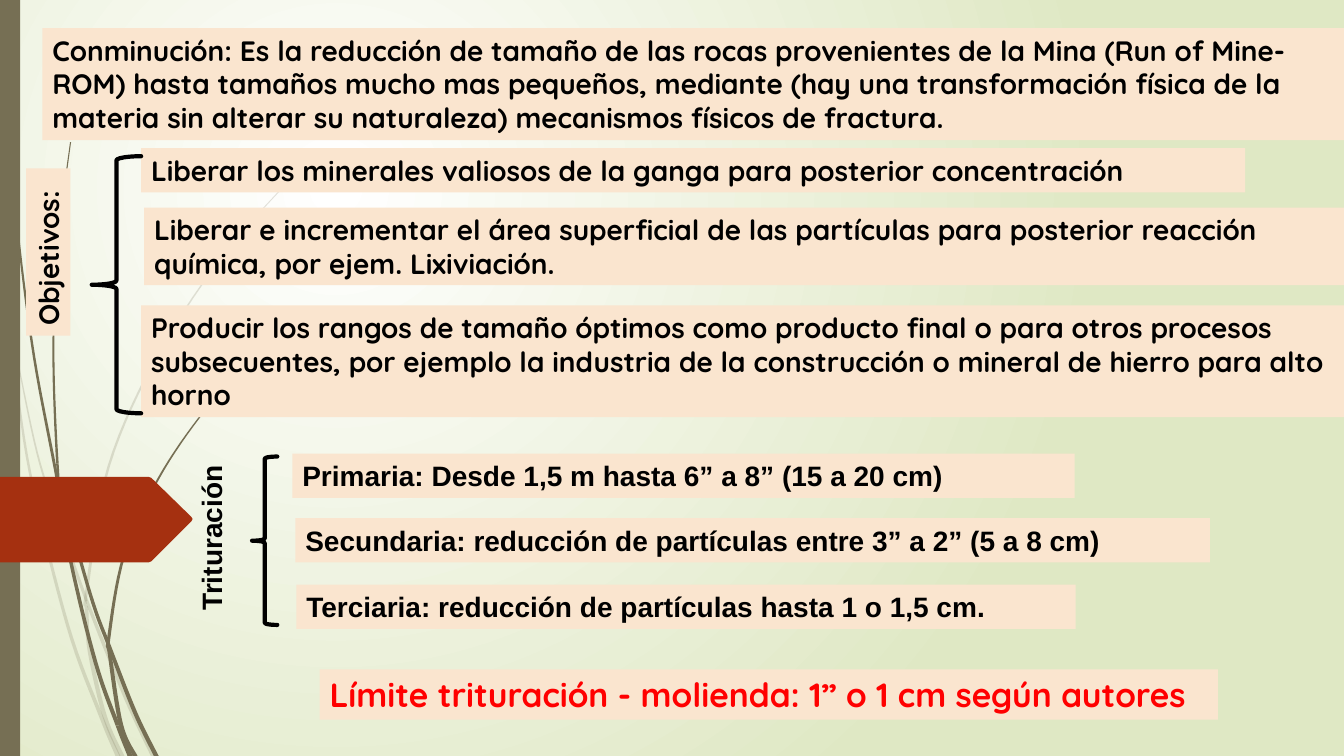
from lxml import etree
from pptx import Presentation
from pptx.dml.color import RGBColor
from pptx.enum.shapes import MSO_SHAPE
from pptx.enum.text import MSO_AUTO_SIZE
from pptx.oxml.ns import qn
from pptx.util import Inches, Pt

RECTANGLE = MSO_SHAPE.RECTANGLE
LEFT_BRACE = MSO_SHAPE.LEFT_BRACE
FIT_SHAPE = MSO_AUTO_SIZE.SHAPE_TO_FIT_TEXT

WHITE = RGBColor(0xFF, 0xFF, 0xFF)
LIME = RGBColor(0xDF, 0xE8, 0xC4)
OLIVE = RGBColor(0x76, 0x6F, 0x54)
RUST = RGBColor(0xA5, 0x30, 0x10)
PEACH = RGBColor(0xFA, 0xE5, 0xCF)
BLACK = RGBColor(0, 0, 0)
RED = RGBColor(0xFF, 0, 0)

ROUNDED = "Quicksand"
PLAIN = "Arial"
CURVE_STEPS = 8

DEFINITION = (
    "Conminución: Es la reducción de tamaño de las rocas provenientes de la Mina "
    "(Run of Mine- ROM) hasta tamaños mucho mas pequeños, mediante (hay una "
    "transformación física de la materia sin alterar su naturaleza) mecanismos "
    "físicos de fractura."
)
OBJECTIVES = [
    ((0, 0, 10.95, 0.44),
     "Liberar los minerales valiosos de la ganga para posterior concentración"),
    ((0.03, 0.59, 12.23, 0.77),
     "Liberar e incrementar el área superficial de las partículas para posterior "
     "reacción química, por ejem. Lixiviación."),
    ((0, 1.56, 12.23, 1.11),
     "Producir los rangos de tamaño óptimos como producto final o para otros procesos "
     "subsecuentes, por ejemplo la industria de la construcción o mineral de hierro "
     "para alto horno"),
]
CRUSHING_STAGES = [
    ((0, 0, 7.76, 0.44), "Primaria: Desde 1,5 m hasta 6” a 8” (15 a 20 cm)"),
    ((0.03, 0.64, 9.07, 0.44),
     "Secundaria: reducción de partículas entre 3” a 2” (5 a 8 cm)"),
    ((0.04, 1.3, 7.73, 0.44), "Terciaria: reducción de partículas hasta 1 o 1,5 cm."),
]
PALE_STEMS = [
    ([(0, 2.9), (0.12, 3.5), (0.3, 4.7), (0.67, 6.2), (1, 7.1), (1.17, 7.5)], (1, 4)),
    ([(0.15, 3.45), (0.37, 4.5), (0.6, 5.21), (0.86, 5.96), (1.25, 6.93),
      (1.52, 7.5)], (3,)),
    ([(3.12, 1.53), (2.28, 2.45), (1.59, 3.48), (1.08, 4.62), (0.86, 5.86),
      (0.86, 6.05), (0.89, 6.46), (1.04, 7.11), (1.21, 7.5)], (4, 5, 7)),
]
DARK_STEMS = [
    ([(0.03, 0), (0.07, 1.1), (0.18, 2.33), (0.34, 3.55), (0.57, 4.77), (0.7, 5.56),
      (0.95, 6.58), (1.17, 7.2), (1.29, 7.5)], (4, 7)),
    ([(0.7, 1.41), (0.57, 2.45), (0.53, 3.49), (0.57, 4.6), (0.62, 4.9), (0.9, 5.91),
      (1.09, 6.43), (1.34, 7.07), (1.55, 7.5)], (3, 4, 6)),
    ([(2.6, 3.44), (2.04, 4.06), (1.57, 4.75), (1.23, 5.51), (1.08, 6.32),
      (1.09, 6.5), (1.2, 7.19), (1.34, 7.5)], (4, 5, 6)),
]
POINTER = [(0, 0), (1.47, 0), (1.5, 0.01), (1.51, 0.02), (1.9, 0.4), (1.91, 0.42),
           (1.9, 0.44), (1.51, 0.83), (1.5, 0.84), (1.47, 0.85), (0, 0.85)]


def paint(shape, color):
    """Give a shape a plain fill without outline or shadow."""
    shape.shadow.inherit = False
    shape.fill.solid()
    shape.fill.fore_color.rgb = color
    shape.line.fill.background()


def set_background(slide):
    """Fill the slide with a round white-to-lime gradient."""
    fill = slide.background.fill
    fill.gradient()
    for stop, color in zip(fill.gradient_stops, (WHITE, LIME)):
        stop.color.rgb = color
    linear = next(slide.element.iter(qn("a:lin")))
    circle = etree.Element(qn("a:path"), path="circle")
    etree.SubElement(circle, qn("a:fillToRect"),
                     l="50000", t="50000", r="100000", b="100000")
    linear.getparent().replace(linear, circle)


def smooth(points):
    """Return points along a smooth curve through the given ones."""
    padded = [points[0], *points, points[-1]]
    curve = []
    for a, b, c, d in zip(padded, padded[1:], padded[2:], padded[3:]):
        for step in range(CURVE_STEPS):
            t = step / CURVE_STEPS
            curve.append(tuple(
                (2 * q + (r - p) * t + (2 * p - 5 * q + 4 * r - s) * t ** 2
                 + (3 * q - p - 3 * r + s) * t ** 3) / 2
                for p, q, r, s in zip(a, b, c, d)))
    return curve + [points[-1]]


def add_outline(slide, points, color):
    """Draw a filled polygon and return it."""
    corners = [(Inches(x), Inches(y)) for x, y in points]
    builder = slide.shapes.build_freeform(*corners[0])
    builder.add_line_segments(corners[1:], close=True)
    shape = builder.convert_to_shape()
    paint(shape, color)
    return shape


def add_stem(slide, points, joints, alpha):
    """Draw a grass stem that widens to its foot, in sections cut at the joints."""
    curve = smooth(points)
    halves = [0.005 + 0.02 * index / len(curve) for index in range(len(curve))]
    left = [(x - half, y) for (x, y), half in zip(curve, halves)]
    right = [(x + half, y) for (x, y), half in zip(curve, halves)]
    cuts = [CURVE_STEPS * joint for joint in (0, *joints, len(points) - 1)]
    for start, end in zip(cuts, cuts[1:]):
        section = slice(start, end + 1)
        stem = add_outline(slide, left[section] + right[section][::-1], OLIVE)
        if alpha < 100:
            color = next(stem.element.spPr.iter(qn("a:srgbClr")))
            etree.SubElement(color, qn("a:alpha"), val=str(alpha * 1000))


def add_decoration(slide):
    """Place the stems, the side band and the pointer."""
    for stems, alpha in ((PALE_STEMS, 20), (DARK_STEMS, 100)):
        for points, joints in stems:
            add_stem(slide, points, joints, alpha)
    band = slide.shapes.add_shape(RECTANGLE, 0, 0, Inches(0.2), Inches(7.5))
    paint(band, OLIVE)
    add_outline(slide, [(x, 4.73 + y) for x, y in POINTER], RUST)


def add_label(slide, box, text, font_name, size=20, color=BLACK, fill=PEACH,
              rotation=0, wrap=True):
    """Write bold text in a box, on a filled ground if there is one."""
    label = slide.shapes.add_textbox(*map(Inches, box))
    label.rotation = rotation
    if fill is not None:
        label.fill.solid()
        label.fill.fore_color.rgb = fill
    text_frame = label.text_frame
    text_frame.word_wrap = wrap
    text_frame.auto_size = FIT_SHAPE
    text_frame.text = text
    font = text_frame.paragraphs[0].runs[0].font
    font.name, font.size, font.bold = font_name, Pt(size), True
    font.color.rgb = color


def add_brace(slide, box):
    """Draw a thick black left brace with round ends."""
    brace = slide.shapes.add_shape(LEFT_BRACE, *map(Inches, box))
    brace.shadow.inherit = False
    brace.fill.background()
    brace.line.color.rgb = BLACK
    brace.line.width = Pt(3)
    next(brace.element.spPr.iter(qn("a:ln"))).set("cap", "rnd")


def add_list(slide, left, top, items, font_name):
    """Place a list of labels relative to its top left corner."""
    for (x, y, width, height), text in items:
        add_label(slide, (left + x, top + y, width, height), text, font_name)


def add_objectives(slide, left, top):
    """Place the objectives with their upright title and brace."""
    add_label(slide, (left - 1.75, top + 0.81, 1.66, 0.44), "Objetivos:", ROUNDED,
              rotation=270)
    add_list(slide, left, top, OBJECTIVES, ROUNDED)
    add_brace(slide, (left - 0.49, top + 0.08, 0.49, 2.55))


def add_crushing(slide, left, top):
    """Place the crushing stages with their upright title and brace."""
    add_list(slide, left, top, CRUSHING_STAGES, PLAIN)
    add_label(slide, (left - 1.63, top + 0.61, 1.65, 0.44), "Trituración", PLAIN,
              fill=None, rotation=270, wrap=False)
    add_brace(slide, (left - 0.4, top + 0.03, 0.25, 1.67))


def main():
    """Build the slide and save it."""
    presentation = Presentation()
    presentation.slide_width = Inches(13.33)
    presentation.slide_height = Inches(7.5)
    slide = presentation.slides.add_slide(presentation.slide_layouts[6])
    set_background(slide)
    add_decoration(slide)
    add_label(slide, (0.42, 0.28, 12.91, 1.11), DEFINITION, ROUNDED)
    add_objectives(slide, 1.4, 1.47)
    add_crushing(slide, 2.9, 4.5)
    add_label(slide, (3.17, 6.64, 8.91, 0.5),
              "Límite trituración - molienda: 1” o 1 cm según autores", ROUNDED,
              size=24, color=RED, wrap=False)
    presentation.save("out.pptx")


if __name__ == "__main__":
    main()
